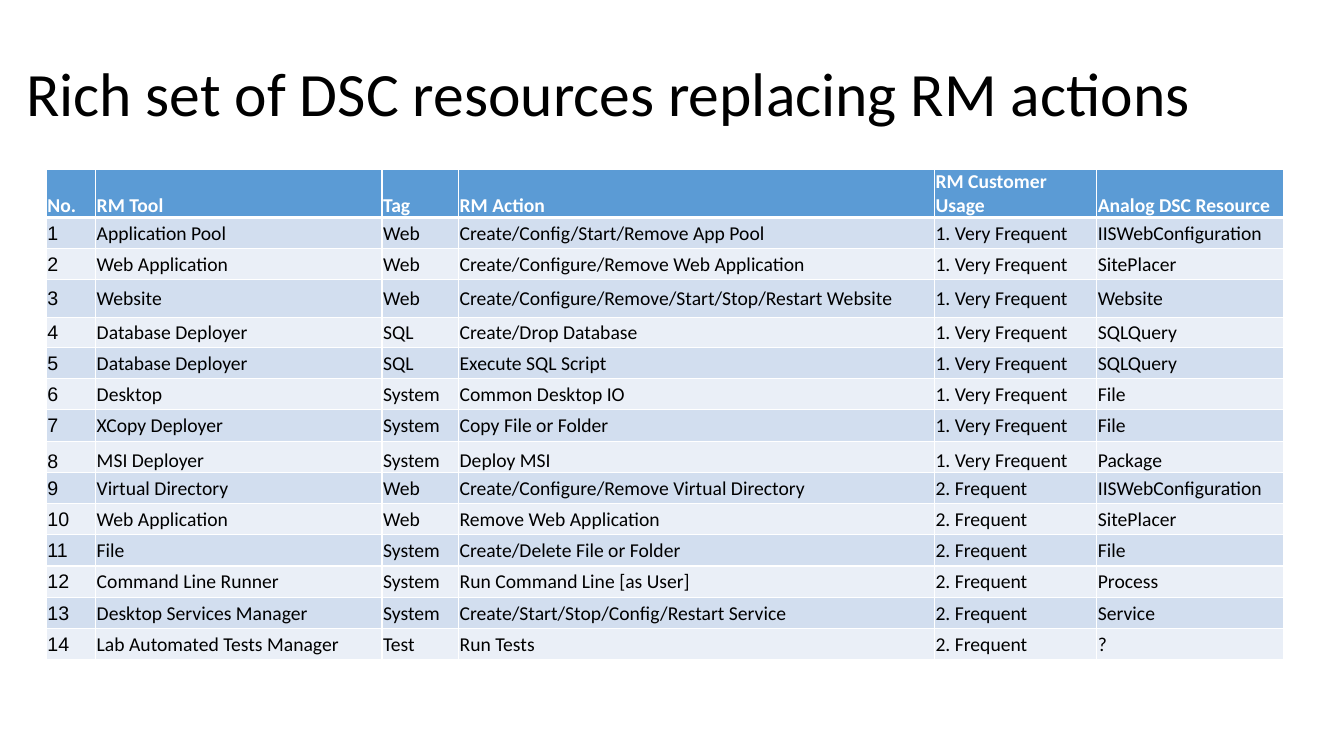
from dataclasses import astuple, dataclass

from lxml.etree import SubElement
from pptx import Presentation
from pptx.dml.color import RGBColor
from pptx.enum.text import MSO_ANCHOR as Anchor
from pptx.oxml.ns import qn
from pptx.table import _Cell as Cell
from pptx.text.text import _Paragraph as Paragraph
from pptx.util import Inches, Pt

BLACK, WHITE = "000000", "FFFFFF"
HEADER_FILL, ODD_FILL, EVEN_FILL = "5B9BD5", "D2DEEF", "EAEFF7"
COLUMN_WIDTHS = (0.49, 2.84, 0.76, 4.72, 1.61, 1.85)
ROW_HEIGHT = 0.31
SPECIAL_HEIGHTS = {3: 0.37, 4: 0.3}
BOTTOM_ROWS = (0, 8)
VERY_FREQUENT, FREQUENT = "1. Very Frequent", "2. Frequent"


@dataclass
class Action:
    tool: str
    tag: str
    action: str
    usage: str
    resource: str


HEADINGS = ("No.", "RM Tool", "Tag", "RM Action", "RM Customer Usage", "Analog DSC Resource")
ACTIONS = [
    Action("Application Pool", "Web", "Create/Config/Start/Remove App Pool",
           VERY_FREQUENT, "IISWebConfiguration"),
    Action("Web Application", "Web", "Create/Configure/Remove Web Application",
           VERY_FREQUENT, "SitePlacer"),
    Action("Website", "Web", "Create/Configure/Remove/Start/Stop/Restart Website",
           VERY_FREQUENT, "Website"),
    Action("Database Deployer", "SQL", "Create/Drop Database", VERY_FREQUENT, "SQLQuery"),
    Action("Database Deployer", "SQL", "Execute SQL Script", VERY_FREQUENT, "SQLQuery"),
    Action("Desktop", "System", "Common Desktop IO", VERY_FREQUENT, "File"),
    Action("XCopy Deployer", "System", "Copy File or Folder", VERY_FREQUENT, "File"),
    Action("MSI Deployer", "System", "Deploy MSI", VERY_FREQUENT, "Package"),
    Action("Virtual Directory", "Web", "Create/Configure/Remove Virtual Directory",
           FREQUENT, "IISWebConfiguration"),
    Action("Web Application", "Web", "Remove Web Application", FREQUENT, "SitePlacer"),
    Action("File", "System", "Create/Delete File or Folder", FREQUENT, "File"),
    Action("Command Line Runner", "System", "Run Command Line [as User]", FREQUENT, "Process"),
    Action("Desktop Services Manager", "System", "Create/Start/Stop/Config/Restart Service",
           FREQUENT, "Service"),
    Action("Lab Automated Tests Manager", "Test", "Run Tests", FREQUENT, "?"),
]


def color(value: str) -> RGBColor:
    return RGBColor.from_string(value)


def add_run(paragraph: Paragraph, text: str, size: int, font: str, ink: str,
            bold: bool = False) -> None:
    run = paragraph.add_run()
    run.text = text
    run.font.size = Pt(size)
    run.font.name = font
    run.font.bold = bold
    run.font.color.rgb = color(ink)


def set_borders(cell: Cell, top: int, bottom: int) -> None:
    properties = cell._tc.get_or_add_tcPr()
    for side, width in (("L", 1), ("R", 1), ("T", top), ("B", bottom)):
        line = SubElement(properties, qn(f"a:ln{side}"), w=str(Pt(width)))
        fill = SubElement(line, qn("a:solidFill"))
        SubElement(fill, qn("a:srgbClr"), val=WHITE)


def fill_cell(cell: Cell, text: str, row: int, column: int) -> None:
    header = row == 0
    set_borders(cell, top=3 if row == 1 else 1, bottom=3 if header else 1)
    cell.fill.solid()
    band = ODD_FILL if row % 2 else EVEN_FILL
    cell.fill.fore_color.rgb = color(HEADER_FILL if header else band)
    cell.margin_left = cell.margin_top = cell.margin_right = Inches(0.01)
    cell.margin_bottom = Inches(0)
    cell.vertical_anchor = Anchor.BOTTOM if row in BOTTOM_ROWS else Anchor.MIDDLE
    font = "Arial" if column == 0 and not header else "Calibri"
    add_run(cell.text_frame.paragraphs[0], text, 14, font, WHITE if header else BLACK, header)


def main() -> None:
    deck = Presentation()
    deck.slide_width, deck.slide_height = Inches(13.33), Inches(7.5)
    slide = deck.slides.add_slide(deck.slide_layouts[6])

    # Title
    title = slide.shapes.add_textbox(Inches(0.16), Inches(0.23), Inches(12.44), Inches(1.45))
    title.text_frame.word_wrap = True
    title.text_frame.vertical_anchor = Anchor.MIDDLE
    heading = title.text_frame.paragraphs[0]
    heading.line_spacing = 0.9
    add_run(heading, "Rich set of DSC resources replacing RM actions", 44, "Calibri", BLACK)

    # Table of actions and their resources
    rows = [HEADINGS] + [(str(number), *astuple(action))
                         for number, action in enumerate(ACTIONS, start=1)]
    heights = [SPECIAL_HEIGHTS.get(row, ROW_HEIGHT) for row in range(len(rows))]
    table = slide.shapes.add_table(
        len(rows), len(HEADINGS), Inches(0.46), Inches(1.68),
        Inches(sum(COLUMN_WIDTHS)), Inches(sum(heights))).table
    for column, width in zip(table.columns, COLUMN_WIDTHS):
        column.width = Inches(width)
    for row, (texts, height) in enumerate(zip(rows, heights)):
        table.rows[row].height = Inches(height)
        for column, text in enumerate(texts):
            fill_cell(table.cell(row, column), text, row, column)

    deck.save("out.pptx")


if __name__ == "__main__":
    main()
